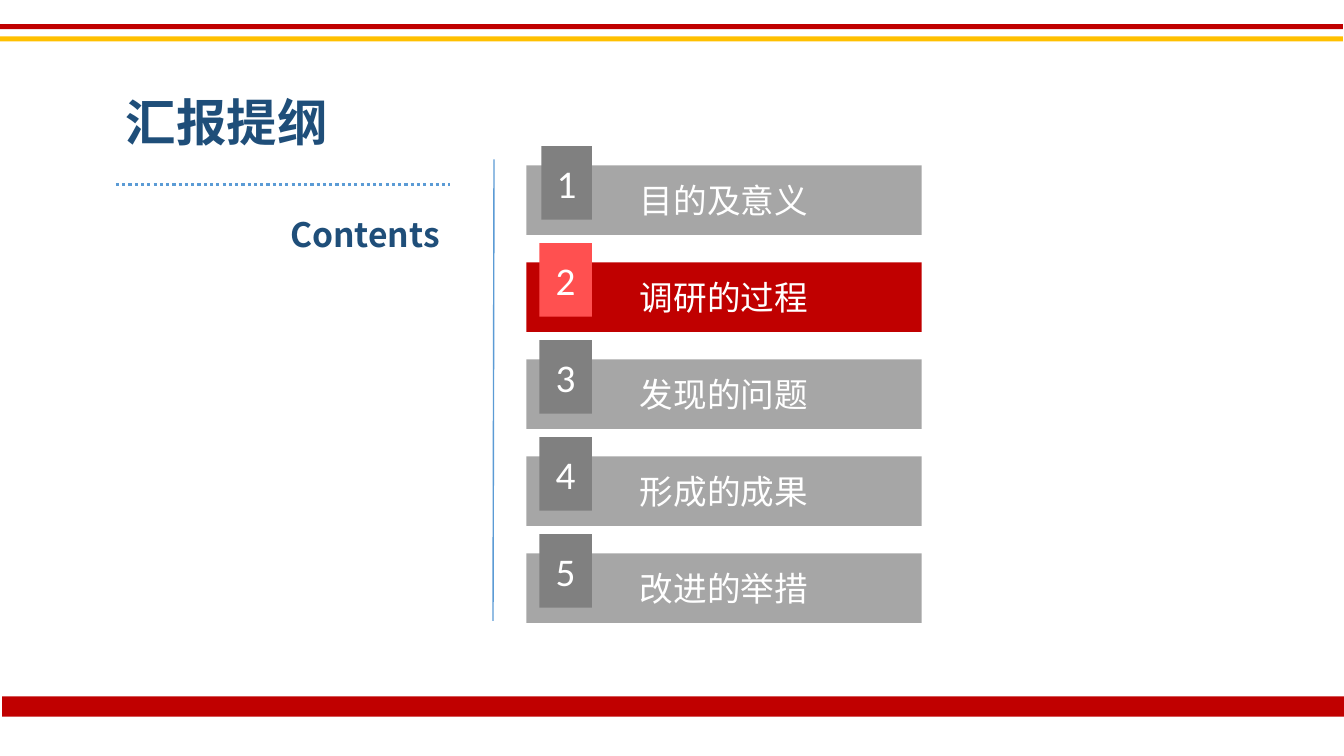
from lxml import etree
from pptx import Presentation
from pptx import util as u
from pptx.dml.color import RGBColor
from pptx.enum import dml, shapes, text
from pptx.oxml import ns

WIDTH, HEIGHT = 13.33, 7.5
RED = RGBColor(0xC0, 0x00, 0x00)
CORAL = RGBColor(0xFF, 0x50, 0x50)
GOLD = RGBColor(0xFF, 0xC0, 0x00)
NAVY = RGBColor(0x1F, 0x4E, 0x79)
BLUE = RGBColor(0x5B, 0x9B, 0xD5)
SILVER = RGBColor(0xA6, 0xA6, 0xA6)
GRAY = RGBColor(0x80, 0x80, 0x80)
WHITE = RGBColor(0xFF, 0xFF, 0xFF)
CHINESE, LATIN = "Noto Sans CJK SC", "Calibri"
TOPICS = ["目的及意义", "调研的过程", "发现的问题", "形成的成果", "改进的举措"]
CURRENT = 2


def write(shape, words, size, font, color, align, bold=False):
    para = shape.text_frame.paragraphs[0]
    para.text = words
    para.alignment = align
    para.font.size = u.Pt(size)
    para.font.name = font
    para.font.bold = bold
    para.font.color.rgb = color
    # East Asian glyphs take their own typeface entry
    props = para._p.get_or_add_pPr().get_or_add_defRPr()
    etree.SubElement(props, ns.qn("a:ea"), typeface=font)


def add_block(page, left, top, width, height, color):
    block = page.shapes.add_shape(
        shapes.MSO_SHAPE.RECTANGLE, *map(u.Inches, (left, top, width, height)))
    block.shadow.inherit = False
    block.fill.solid()
    block.fill.fore_color.rgb = color
    block.line.fill.background()
    block.text_frame.vertical_anchor = text.MSO_ANCHOR.MIDDLE
    return block


def add_label(page, left, top, width, height, words, size, align):
    box = page.shapes.add_textbox(*map(u.Inches, (left, top, width, height)))
    box.text_frame.word_wrap = True
    write(box, words, size, CHINESE, NAVY, align, bold=True)


def add_rule(page, start, end, weight):
    rule = page.shapes.add_connector(
        shapes.MSO_CONNECTOR.STRAIGHT, *map(u.Inches, start + end))
    rule.line.color.rgb = BLUE
    rule.line.width = u.Pt(weight)
    etree.SubElement(rule._element.spPr, ns.qn("a:effectLst"))
    return rule


def add_heading(page, left, top, width):
    """Title, dotted rule and subtitle on the left."""
    rule = add_rule(page, (left, top + 0.98), (left + width, top + 0.98), 2.25)
    rule.line.dash_style = dml.MSO_LINE.ROUND_DOT
    label_width = 2.82
    add_label(page, left, top, label_width, 0.71, "汇报提纲", 36, text.PP_ALIGN.LEFT)
    add_label(page, left + width - label_width, top + 1.22, label_width, 0.51,
              "Contents", 24, text.PP_ALIGN.RIGHT)


def add_topic(page, left, top, width, number, topic):
    """One agenda bar with its raised number tile."""
    active = number == CURRENT
    bar = add_block(page, left, top, width, 0.69, RED if active else SILVER)
    write(bar, topic, 24, CHINESE, WHITE, text.PP_ALIGN.CENTER)
    inset = 0.15 if number == 1 else 0.13
    tile = add_block(page, left + inset, top - 0.19, 0.65 - inset, 0.73,
                     CORAL if active else GRAY)
    write(tile, str(number), 28, LATIN, WHITE, text.PP_ALIGN.CENTER)


def add_agenda(page, left, top, width, height):
    """Divider and the evenly spaced topics."""
    add_rule(page, (left - 0.32, top - 0.06), (left - 0.33, top + height - 0.02), 1)
    pitch = (height - 0.69) / (len(TOPICS) - 1)
    for row, topic in enumerate(TOPICS):
        add_topic(page, left, top + row * pitch, width, row + 1, topic)


def add_bands(page):
    """Coloured bands across the top and the foot."""
    for left, top, height, color in ((0.02, 6.91, 0.2, RED),
                                     (0, 0.36, 0.05, GOLD),
                                     (0, 0.24, 0.05, RED)):
        add_block(page, left, top, WIDTH - 0.01, height, color)


def main():
    deck = Presentation()
    deck.slide_width, deck.slide_height = u.Inches(WIDTH), u.Inches(HEIGHT)
    page = deck.slides.add_slide(deck.slide_layouts[6])
    add_heading(page, 1.15, 0.85, 3.31)
    add_agenda(page, 5.22, 1.64, 3.92, 4.54)
    add_bands(page)
    deck.save("out.pptx")


if __name__ == "__main__":
    main()
